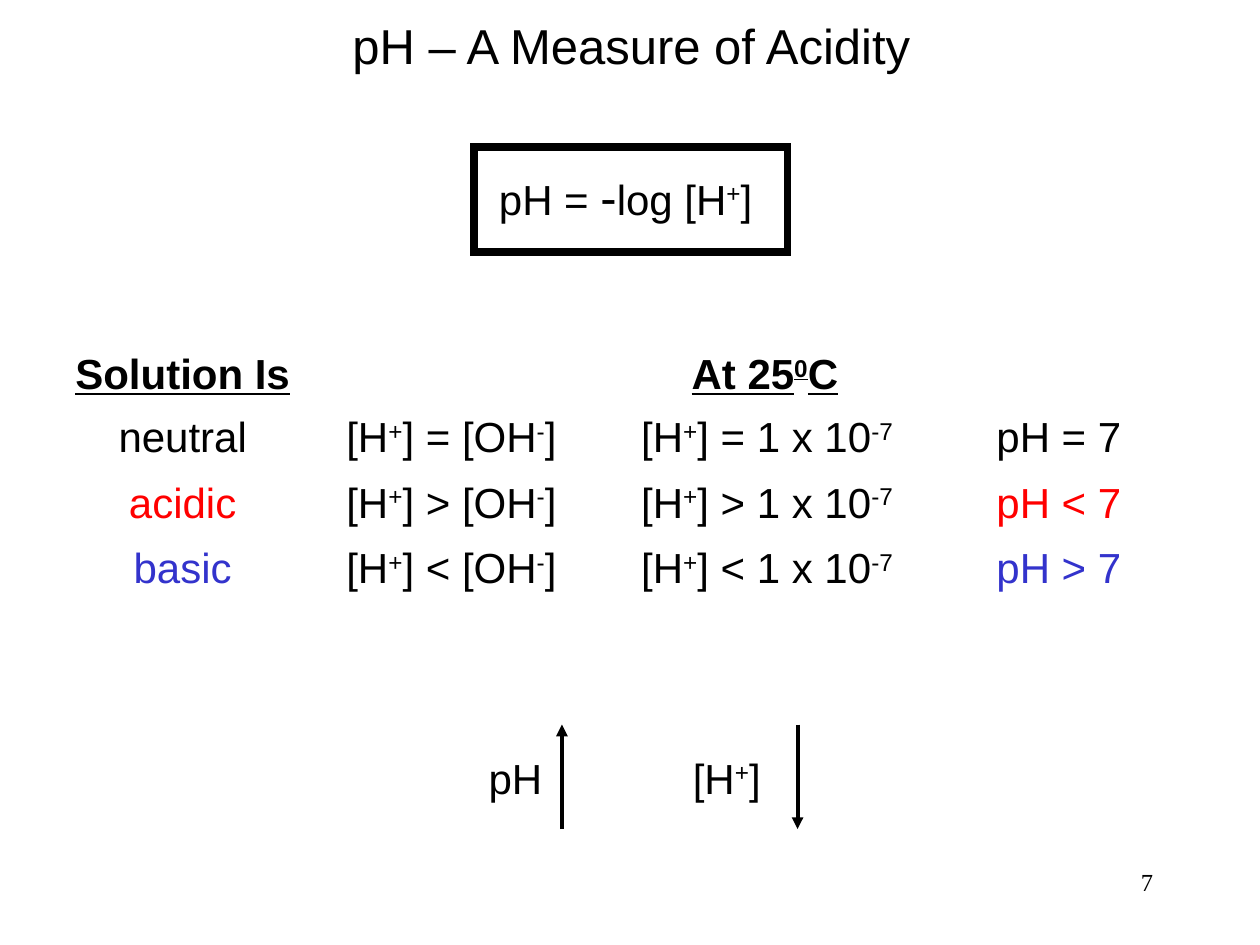
from dataclasses import dataclass
from lxml import etree
from pptx import Presentation
from pptx import util as u
from pptx.dml.color import RGBColor
from pptx.enum import shapes, text
from pptx.oxml.ns import qn


@dataclass(frozen=True)
class Theme:
    ink: str = "000000"
    acid: str = "FF0000"
    base: str = "3333CC"
    font: str = "Arial"
    serif: str = "Times New Roman"
    head: int = 28
    body: int = 24
    note: int = 14


T = Theme()
LEFT, MID, RIGHT = text.PP_ALIGN.LEFT, text.PP_ALIGN.CENTER, text.PP_ALIGN.RIGHT
TOP, STEP, HIGH = 2.71, 0.52, 0.5
AXIS = 1.45


def row(n):
    return TOP + 0.5 + (n - 1) * STEP if n else TOP


def put(para, mark, size=T.body, color=T.ink, name=T.font, **style):
    look = {"size": u.Pt(size), "name": name, **style}
    for i, part in enumerate(mark.split("^")):
        if not part:
            continue
        run = para.add_run()
        run.text = part
        for key, value in look.items():
            setattr(run.font, key, value)
        run.font.color.rgb = RGBColor.from_string(color)
        if i % 2:
            run.font._element.set("baseline", "30000")


def fit(shape, align, pad=(0.1, 0.05), grow=True):
    frame = shape.text_frame
    fit_mode = text.MSO_AUTO_SIZE.SHAPE_TO_FIT_TEXT if grow else text.MSO_AUTO_SIZE.NONE
    side, edge = map(u.Inches, pad)
    look = {
        "word_wrap": not grow,
        "auto_size": fit_mode,
        "vertical_anchor": text.MSO_ANCHOR.TOP,
        "margin_left": side,
        "margin_right": side,
        "margin_top": edge,
        "margin_bottom": edge,
    }
    for key, value in look.items():
        setattr(frame, key, value)
    para = frame.paragraphs[0]
    para.alignment = align
    return para


def label(slide, mark, x, y, w, align=LEFT, grow=True, **style):
    box = slide.shapes.add_textbox(*map(u.Inches, (x, y, w, HIGH)))
    put(fit(box, align, grow=grow), mark, **style)


def title(slide, mark):
    shape = slide.shapes.title
    spots = {"left": 2.66, "top": 0.07, "width": 4.7, "height": 0.57}
    for key, value in spots.items():
        setattr(shape, key, u.Inches(value))
    put(fit(shape, MID), mark, size=T.head)


def ink(line, width, tag, **attrs):
    line.color.rgb = RGBColor.from_string(T.ink)
    line.width = u.Pt(width)
    etree.SubElement(line._get_or_add_ln(), qn(tag), **attrs)


def rule(slide):
    box = slide.shapes.add_shape(
        shapes.MSO_SHAPE.RECTANGLE, *map(u.Inches, (3.76, 1.17, 2.49, 0.83)))
    box.shadow.inherit = False
    box.fill.background()
    ink(box.line, 4.5, "a:miter", lim="800000")
    para = fit(box, LEFT, (0.2, 0.15))
    put(para, "pH = ")
    put(para, "-", size=T.head)
    put(para, "log [H^+^]")


def arrow(slide, x, start, end):
    line = slide.shapes.add_connector(
        shapes.MSO_CONNECTOR.STRAIGHT, *map(u.Inches, (x, start, x, end)))
    ink(line.line, 2.25, "a:tailEnd", type="triangle")
    etree.SubElement(line._element.spPr, qn("a:effectLst"))


def table(slide):
    bold = {"bold": True, "underline": True}
    label(slide, "Solution Is", AXIS - 1, row(0), 2, MID, **bold)
    label(slide, "At 25^0^C", 5.36, row(0), 1.42, MID, **bold)
    cases = (("neutral", 1.22, "=", "=", T.ink),
             ("acidic", 1.06, ">", "<", T.acid),
             ("basic", 0.98, "<", ">", T.base))
    for n, (word, wide, ion, sign, color) in enumerate(cases, 1):
        y = row(n)
        label(slide, word, AXIS - wide / 2, y, wide, MID, color=color)
        label(slide, f"[H^+^] {ion} [OH^-^]", 2.65, y, 1.89)
        label(slide, f"[H^+^] {ion} 1 x 10^-7^", 4.99, y, 2.24)
        label(slide, f"pH {sign} 7", 7.81, y, 1.19, color=color)


def trend(slide):
    high, low = 5.75, 6.58
    label(slide, "pH", 3.78, 5.92, 0.72)
    arrow(slide, 4.46, low, high)
    label(slide, "[H^+^]", 5.4, 5.92, 0.76)
    arrow(slide, 6.33, high, low)


def main():
    deck = Presentation()
    deck.slide_width, deck.slide_height = u.Inches(10), u.Inches(7.5)
    slide = deck.slides.add_slide(deck.slide_layouts[5])
    title(slide, "pH – A Measure of Acidity")
    rule(slide)
    table(slide)
    trend(slide)
    label(slide, "7", 7.17, 6.83, 2.08, RIGHT, False, size=T.note, name=T.serif)
    deck.save("out.pptx")


if __name__ == "__main__":
    main()
